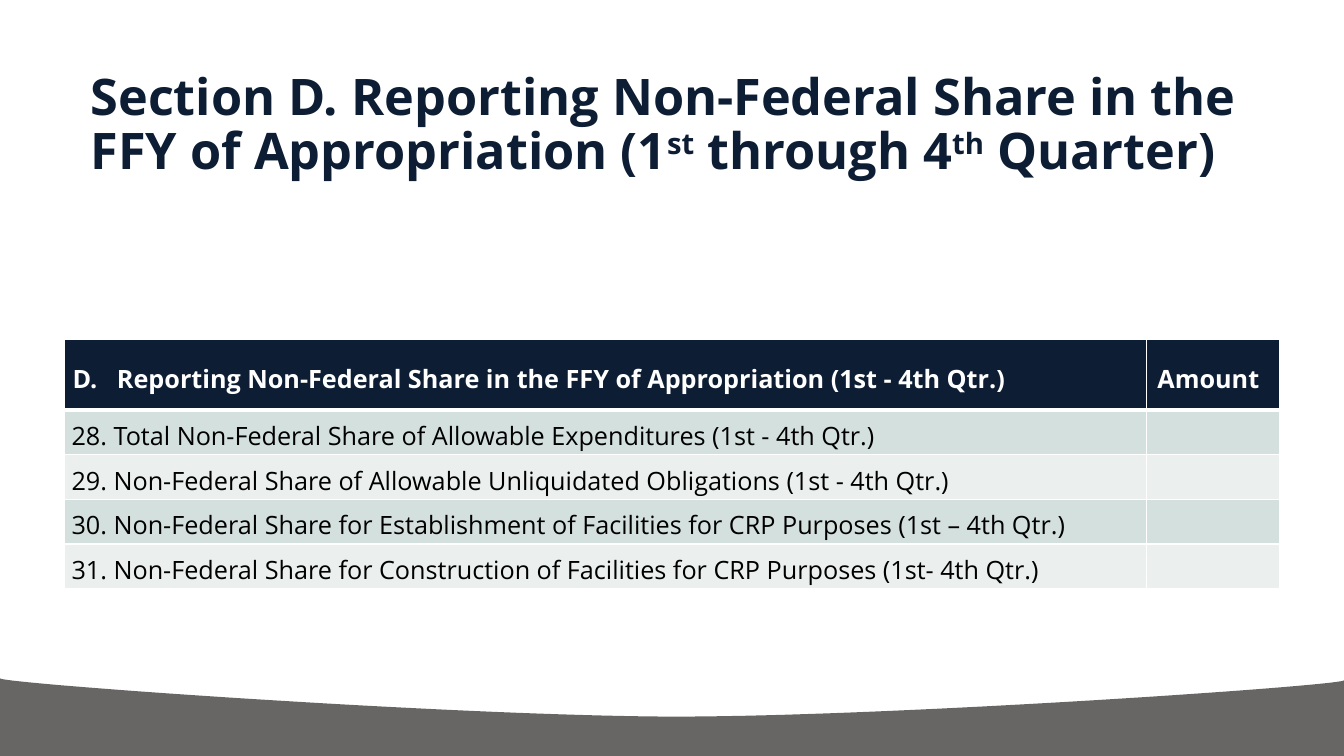
import pptx
import pptx.dml.color
import pptx.enum.text
import pptx.oxml
import pptx.oxml.ns
import pptx.util

Inches = pptx.util.Inches
Pt = pptx.util.Pt
MIDDLE = pptx.enum.text.MSO_ANCHOR.MIDDLE
FONT = "Open Sans"
COLORS = {"navy": "0D1D34", "gray": "686665", "white": "FFFFFF",
          "black": "000000", "band": "D4E0DE", "light": "EBF0EF"}
TITLE = [("Section D. Reporting Non-Federal Share in the FFY of Appropriation (1", False),
         ("st", True), (" through 4", False), ("th", True), (" Quarter)", False)]
ROWS = [
    ("D.\tReporting Non-Federal Share in the FFY of Appropriation (1st - 4th Qtr.)", "Amount"),
    ("28. Total Non-Federal Share of Allowable Expenditures (1st - 4th Qtr.)", ""),
    ("29. Non-Federal Share of Allowable Unliquidated Obligations (1st - 4th Qtr.)", ""),
    ("30. Non-Federal Share for Establishment of Facilities for CRP Purposes (1st – 4th Qtr.)", ""),
    ("31. Non-Federal Share for Construction of Facilities for CRP Purposes (1st- 4th Qtr.)", ""),
]


def rgb(name):
    return pptx.dml.color.RGBColor.from_string(COLORS[name])


def add_run(p, text, size, color, bold):
    r = p.add_run()
    r.text = text
    r.font.name = FONT
    r.font.size = Pt(size)
    r.font.bold = bold
    r.font.color.rgb = rgb(color)
    return r


def curve(start, ctrl1, ctrl2, end, steps=40):
    points = []
    for i in range(1, steps + 1):
        t = i / steps
        u = 1 - t
        points.append(tuple(u**3 * a + 3 * u * u * t * b + 3 * u * t * t * c + t**3 * d
                            for a, b, c, d in zip(start, ctrl1, ctrl2, end)))
    return points


def add_footer_wave(s, x, y, w, h):
    half = w / 2
    left, dip, right = (x, y), (x + half, y + 0.38), (x + w, y + 0.02)
    points = curve(left, (x, y + 0.05), (x + w / 3, y + 0.37), dip)
    points += curve(dip, (x + w * 2 / 3, y + 0.38), (x + w, y + 0.07), right)
    points += [(x + w, y + h), (x, y + h)]
    fb = s.shapes.build_freeform(Inches(left[0]), Inches(left[1]))
    fb.add_line_segments([(Inches(a), Inches(b)) for a, b in points], close=True)
    sp = fb.convert_to_shape()
    sp.shadow.inherit = False
    sp.fill.solid()
    sp.fill.fore_color.rgb = rgb("gray")
    sp.line.fill.background()


def add_title(s, x, y, w, h):
    tf = s.shapes.add_textbox(Inches(x), Inches(y), Inches(w), Inches(h)).text_frame
    tf.word_wrap = True
    tf.vertical_anchor = pptx.enum.text.MSO_ANCHOR.BOTTOM
    tf.margin_bottom = 0
    p = tf.paragraphs[0]
    p.line_spacing = 0.9
    for text, raised in TITLE:
        r = add_run(p, text, 36, "navy", True)
        if raised:
            r.font._element.set("baseline", "30000")


def set_borders(cell, bottom):
    tcPr = cell._tc.get_or_add_tcPr()
    for i, (side, width) in enumerate((("L", 1), ("R", 1), ("T", 1), ("B", bottom))):
        tcPr.insert(i, pptx.oxml.parse_xml(
            f'<a:ln{side} {pptx.oxml.ns.nsdecls("a")} w="{Pt(width)}"><a:solidFill>'
            f'<a:srgbClr val="{COLORS["white"]}"/></a:solidFill></a:ln{side}>'))


def add_share_table(s, x, y, w, h):
    amount_w, header_h = 1.32, 0.7
    row_h = (h - header_h) / (len(ROWS) - 1)
    table = s.shapes.add_table(len(ROWS), 2, Inches(x), Inches(y), Inches(w), Inches(h)).table
    table.columns[0].width = Inches(w - amount_w)
    table.columns[1].width = Inches(amount_w)
    for i, row in enumerate(ROWS):
        header = i == 0
        table.rows[i].height = Inches(header_h if header else row_h)
        for j, text in enumerate(row):
            cell = table.cell(i, j)
            cell.fill.solid()
            cell.fill.fore_color.rgb = rgb("navy" if header else "band" if i % 2 else "light")
            cell.vertical_anchor = MIDDLE
            cell.margin_left = cell.margin_right = Inches(0.11 if j else 0.08 if header else 0.07)
            cell.margin_top = cell.margin_bottom = Inches(0.05 if j else 0)
            above_rule = 3 if header else 1
            set_borders(cell, above_rule)
            p = cell.text_frame.paragraphs[0]
            if not text:
                p.font.size = Pt(18)
                continue
            p.line_spacing = 1.2
            if j == 0:
                pPr = p._p.get_or_add_pPr()
                pPr.set("marL", str(Inches(0.44)))
                pPr.set("indent", str(-Inches(0.44)))
            add_run(p, text, 18, "white" if header else "black", header)


def main():
    prs = pptx.Presentation()
    prs.slide_width = Inches(13.33)
    prs.slide_height = Inches(7.5)
    s = prs.slides.add_slide(prs.slide_layouts[6])
    s.background.fill.solid()
    s.background.fill.fore_color.rgb = rgb("white")
    add_footer_wave(s, 0, 6.73, 13.33, 0.77)
    add_title(s, 0.8, 0.4, 11.76, 1.39)
    add_share_table(s, 0.64, 3.37, 12.05, 2.47)
    prs.save("out.pptx")


if __name__ == "__main__":
    main()
